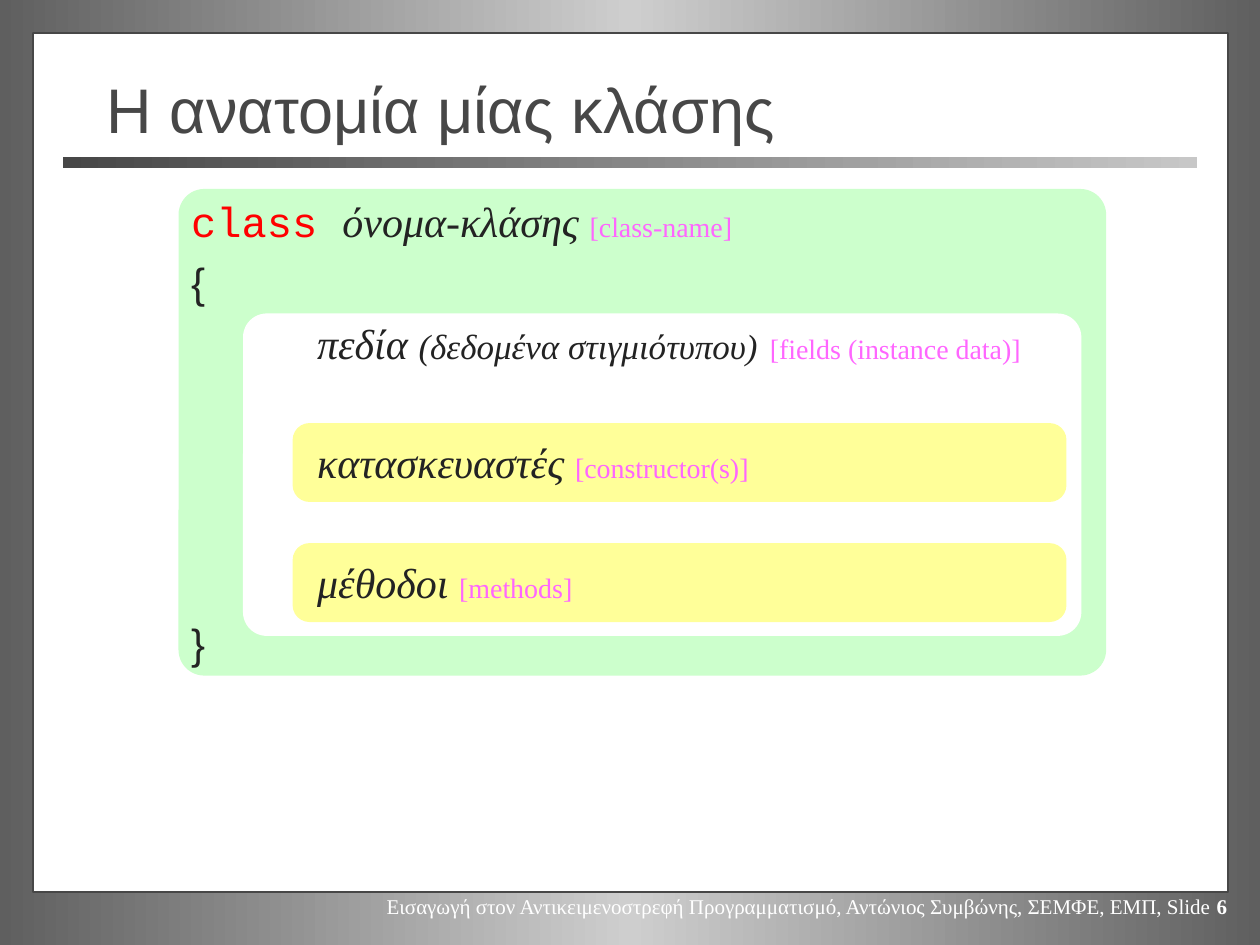
from copy import deepcopy

from lxml.etree import SubElement
from pptx import Presentation
from pptx.dml.color import RGBColor
from pptx.enum.shapes import MSO_SHAPE as Preset
from pptx.enum.text import MSO_ANCHOR as Anchor, MSO_AUTO_SIZE as AutoSize, PP_ALIGN as Align
from pptx.oxml.ns import qn
from pptx.util import Cm, Pt

COLORS = {
    "white": "FFFFFF", "title": "474747", "bar_end": "C7C7C7",
    "edge": "5F5F5F", "middle": "CECECE", "ink": "232323",
    "keyword": "FF0000", "english": "FF66FF",
    "class": "CCFFCC", "member": "FFFF99",
}

FORMATS = {
    "title": {"name": "Arial", "size": Pt(36), "color": "title"},
    "footer": {"name": "Times New Roman", "size": Pt(12), "color": "white"},
    "footer_number": {"name": "Times New Roman", "size": Pt(12), "bold": True, "color": "white"},
    "keyword": {"name": "Courier New", "size": Pt(24), "color": "keyword"},
    "term": {"name": "Times New Roman", "size": Pt(24), "italic": True, "color": "ink"},
    "detail": {"name": "Times New Roman", "size": Pt(20), "italic": True, "color": "ink"},
    "english": {"name": "Times New Roman", "size": Pt(16), "color": "english"},
    "brace": {"name": "Arial", "size": Pt(24), "color": "ink"},
}

LINE_GAP = 6       # points before each line
SECTION_GAP = 39.5  # the same plus one empty line
MEMBER_INDENT = 2.54

# (indent in cm, space before in points, [(text, format), ...])
CLASS_LINES = [
    (0, LINE_GAP, [("class ", "keyword"), ("όνομα-κλάσης ", "term"), ("[class-name]", "english")]),
    (0, LINE_GAP, [("{", "brace")]),
    (MEMBER_INDENT, LINE_GAP, [("πεδία ", "term"), ("(δεδομένα στιγμιότυπου)", "detail"),
                               (" ", "brace"), ("[fields (instance data)]", "english")]),
    (MEMBER_INDENT, SECTION_GAP, [("κατασκευαστές ", "term"), ("[constructor(s)]", "english")]),
    (MEMBER_INDENT, SECTION_GAP, [("μέθοδοι ", "term"), ("[methods]", "english")]),
    (0, LINE_GAP, [("}", "brace")]),
]


def rgb(color):
    return RGBColor.from_string(COLORS[color])


class ClassSlide:
    def __init__(self, slide):
        self.slide = slide

    def gradient(self, fill, owner, colors):
        """Spread the colours evenly from left to right."""
        fill.gradient()
        fill.gradient_angle = 0
        stop_list = owner.xpath(".//a:gsLst")[0]
        while len(stop_list) < len(colors):
            stop_list.append(deepcopy(stop_list[0]))
        for number, (stop, color) in enumerate(zip(fill.gradient_stops, colors)):
            stop.position = number / (len(colors) - 1)
            stop.color.rgb = rgb(color)

    def background(self, *colors):
        self.gradient(self.slide.background.fill, self.slide.element, colors)

    def block(self, box, *colors, line=None, radius=None):
        """Add a rectangle, rounded if a radius in cm is given."""
        preset = Preset.ROUNDED_RECTANGLE if radius else Preset.RECTANGLE
        block = self.slide.shapes.add_shape(preset, *map(Cm, box))
        block.shadow.inherit = False
        if radius:
            block.adjustments[0] = radius / min(box[2:])
        if len(colors) > 1:
            self.gradient(block.fill, block.element, colors)
        else:
            block.fill.solid()
            block.fill.fore_color.rgb = rgb(colors[0])
        if line:
            block.line.color.rgb = rgb(line)
            block.line.width = Pt(1)
        else:
            block.line.fill.background()

    def add_runs(self, paragraph, runs):
        for text, style in runs:
            run = paragraph.add_run()
            run.text = text
            for attribute, value in FORMATS[style].items():
                if attribute == "color":
                    run.font.color.rgb = rgb(value)
                else:
                    setattr(run.font, attribute, value)

    def place(self, shape, box, anchor):
        """Move a text shape and return its text frame."""
        shape.left, shape.top, shape.width, shape.height = map(Cm, box)
        frame = shape.text_frame
        settings = {"auto_size": AutoSize.NONE, "word_wrap": True, "vertical_anchor": anchor}
        for attribute, value in settings.items():
            setattr(frame, attribute, value)
        return frame

    def title(self, box, text):
        frame = self.place(self.slide.shapes.title, box, Anchor.MIDDLE)
        frame.paragraphs[0].alignment = Align.LEFT
        self.add_runs(frame.paragraphs[0], [(text, "title")])

    def body(self, box, lines):
        body = self.slide.placeholders[1]
        self.slide.shapes.element.append(body.element)  # in front of the blocks
        frame = self.place(body, box, Anchor.TOP)
        for number, (indent, gap, runs) in enumerate(lines):
            paragraph = frame.add_paragraph() if number else frame.paragraphs[0]
            paragraph.space_before = Pt(gap)
            properties = paragraph._p.get_or_add_pPr()
            properties.set("marL", str(Cm(indent)))
            properties.set("indent", "0")
            SubElement(properties, qn("a:buNone"))
            self.add_runs(paragraph, runs)

    def footer(self, box, runs):
        frame = self.slide.shapes.add_textbox(*map(Cm, box)).text_frame
        frame.word_wrap = False
        frame.paragraphs[0].alignment = Align.RIGHT
        self.add_runs(frame.paragraphs[0], runs)


def main():
    deck = Presentation()
    deck.slide_width, deck.slide_height = Cm(25.4), Cm(19.05)
    page = ClassSlide(deck.slides.add_slide(deck.slide_layouts[1]))

    page.background("edge", "middle", "edge")
    page.block((0.66, 0.66, 24.1, 17.32), "white", line="title")
    page.footer((7.21, 17.88, 17.78, 0.76), [
        ("Εισαγωγή στον Αντικειμενοστρεφή Προγραμματισμό, Αντώνιος Συμβώνης, "
         "ΣΕΜΦΕ, ΕΜΠ, Slide ", "footer"),
        ("6", "footer_number"),
    ])
    page.block((1.27, 3.17, 22.86, 0.21), "title", "bar_end")
    title = page.slide.shapes.title
    page.slide.shapes.element.append(title.element)  # in front of the white frame
    page.title((1.9, 1.4, 21.59, 1.57), "Η ανατομία μίας κλάσης")

    page.block((3.6, 3.81, 18.7, 9.81), "class", radius=0.52)
    page.block((4.9, 6.32, 16.9, 6.5), "white", radius=0.48)
    for member_top in (8.53, 10.95):
        page.block((5.9, member_top, 15.6, 1.59), "member", radius=0.34)
    page.body((3.6, 3.81, 18.42, 9.81), CLASS_LINES)

    deck.save("out.pptx")


if __name__ == "__main__":
    main()
